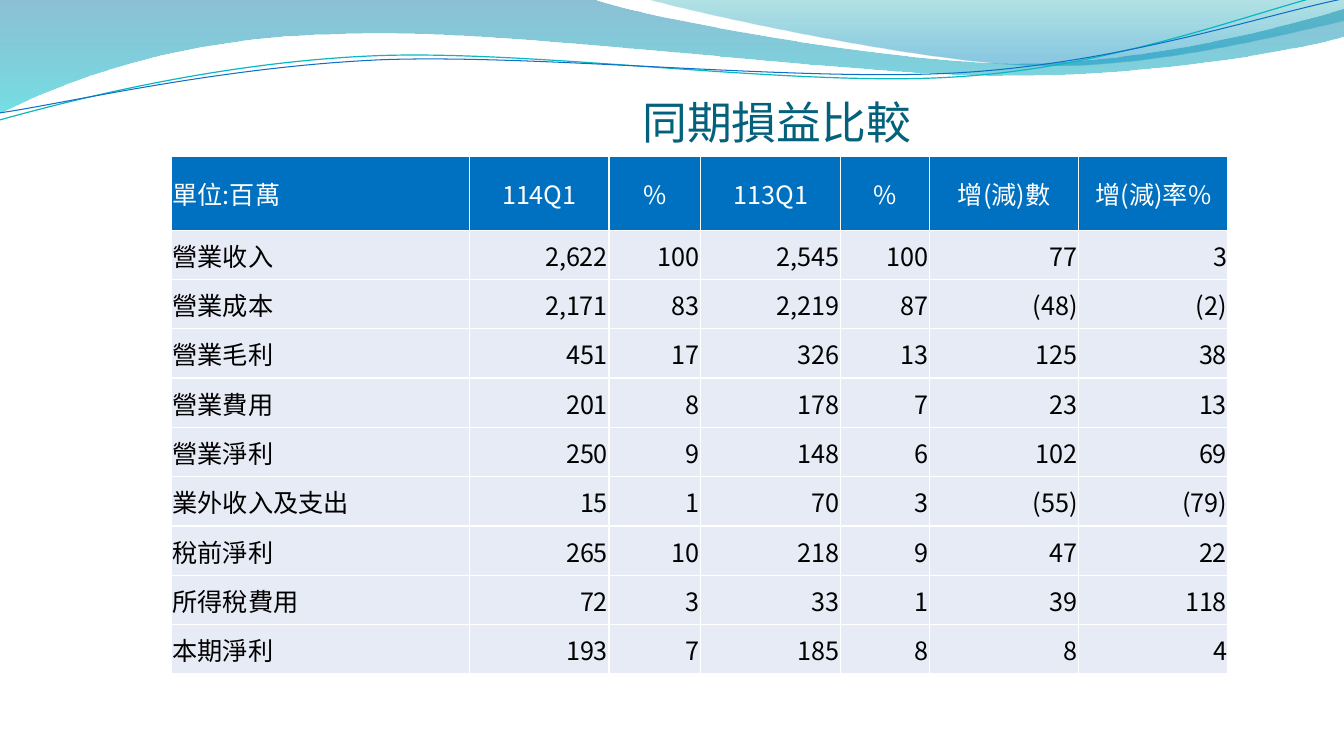
from math import cos, radians, sin

from lxml.etree import SubElement
from pptx import Presentation
from pptx.dml.color import RGBColor
from pptx.enum.text import MSO_ANCHOR as Anchor, PP_ALIGN as Align
from pptx.oxml.ns import qn
from pptx.util import Inches, Pt

FONT = "Noto Sans CJK SC"
WHITE = RGBColor(0xFF, 0xFF, 0xFF)
BLACK = RGBColor(0x00, 0x00, 0x00)
TITLE_TEAL = RGBColor(0x04, 0x61, 0x7B)
HEADER_BLUE = RGBColor(0x00, 0x70, 0xC0)
BODY_GREY = RGBColor(0xE7, 0xEB, 0xF5)
DEEP_BLUE = RGBColor(0x00, 0x74, 0xA1)
CYAN = RGBColor(0x00, 0xC6, 0xCF)
TEAL = RGBColor(0x00, 0xA1, 0xA9)
SKY_BLUE = RGBColor(0x00, 0x8B, 0xBF)
LINE_TEAL = RGBColor(0x0A, 0xB8, 0xBF)
LINE_BLUE = RGBColor(0x0F, 0x6F, 0xC6)

# Each outline is a start point followed by segments of one point (straight)
# or three points (Bezier curve). Gradient stops: position, colour, opacity %.
BANDS = [
    ((-0.01, -0.01, 13.36, 1.14),
     (0, 0),
     [[(5.87, -0.01)],
      [(6.34, 0.17), (8.85, 0.63), (10.11, 0.63)],
      [(11.38, 0.63), (12.78, 0.26), (13.33, 0.09)],
      [(13.35, 0.36)],
      [(13.11, 0.44), (11.6, 0.76), (9.94, 0.75)],
      [(8.29, 0.75), (5.09, 0.28), (3.43, 0.34)],
      [(1.72, 0.36), (0.61, 0.83), (-0.01, 1.13)],
      [(0, 0)]],
     [(0, DEEP_BLUE, 45), (1, CYAN, 55)]),
    ((6.39, -0.01, 6.94, 0.7),
     (6.39, -0.01),
     [[(6.79, 0.11), (9.09, 0.62), (10.25, 0.65)],
      [(11.41, 0.69), (12.82, 0.32), (13.33, 0.21)],
      [(13.33, 0)],
      [(6.39, -0.01)]],
     [(0, TEAL, 30), (0.8, SKY_BLUE, 45)]),
]
STROKE_TILT = -2.7
STROKES = [
    ((-0.03, 0.22, 13.36, 0.71),
     (-0.01, 1.19),
     [[(0.64, 1.01), (2.11, 0.62), (3.69, 0.55)],
      [(5.27, 0.48), (7.9, 0.87), (9.5, 0.76)],
      [(11.1, 0.66), (12.52, 0.08), (13.31, -0.1)]],
     LINE_TEAL, 0.85),
    ((-0.02, 0.3, 13.38, 0.58),
     (0, 1.12),
     [[(0.63, 1.03), (2.18, 0.66), (3.78, 0.59)],
      [(5.37, 0.53), (7.96, 0.82), (9.55, 0.72)],
      [(11.15, 0.62), (12.55, 0.14), (13.34, -0.02)]],
     LINE_BLUE, 0.75),
]

COLUMN_WIDTHS = [2.96, 1.38, 0.91, 1.39, 0.88, 1.48, 1.48]
ROWS = [
    ["單位:百萬", "114Q1", "%", "113Q1", "%", "增(減)數", "增(減)率%"],
    ["營業收入", "2,622", "100", "2,545", "100", "77", "3"],
    ["營業成本", "2,171", "83", "2,219", "87", "(48)", "(2)"],
    ["營業毛利", "451", "17", "326", "13", "125", "38"],
    ["營業費用", "201", "8", "178", "7", "23", "13"],
    ["營業淨利", "250", "9", "148", "6", "102", "69"],
    ["業外收入及支出", "15", "1", "70", "3", "(55)", "(79)"],
    ["稅前淨利", "265", "10", "218", "9", "47", "22"],
    ["所得稅費用", "72", "3", "33", "1", "39", "118"],
    ["本期淨利", "193", "7", "185", "8", "8", "4"],
]


def place(shape, box):
    shape.left, shape.top, shape.width, shape.height = map(Inches, box)


def add_outline(slide, box, start, segments, close, tilt=0):
    """Draw the outline in its box; points are given as seen after the tilt."""
    left, top, width, height = box
    center_x, center_y = left + width / 2, top + height / 2
    cosine, sine = cos(radians(-tilt)), sin(radians(-tilt))

    def untilted(point):
        x, y = point[0] - center_x, point[1] - center_y
        return (Inches(center_x + x * cosine - y * sine),
                Inches(center_y + x * sine + y * cosine))

    builder = slide.shapes.build_freeform(*untilted(start))
    builder.add_line_segments([untilted(point) for segment in segments for point in segment],
                              close=close)
    shape = builder.convert_to_shape()
    place(shape, box)
    shape.rotation = tilt
    shape.shadow.inherit = False

    straight_lines = iter(shape._element.findall(".//" + qn("a:lnTo")))
    for segment in segments:
        lines = [next(straight_lines) for _ in segment]
        if len(lines) == 3:
            curve = SubElement(lines[0].getparent(), qn("a:cubicBezTo"))
            lines[0].addprevious(curve)
            for line in lines:
                curve.append(line[0])
                line.getparent().remove(line)
    return shape


def add_waves(slide):
    for box, start, segments, stops in BANDS:
        band = add_outline(slide, box, start, segments, close=True)
        band.line.fill.background()
        band.fill.gradient()
        band.fill.gradient_angle = 270
        for stop, (position, color, _) in zip(band.fill.gradient_stops, stops):
            stop.position = position
            stop.color.rgb = color
        colors = band._element.spPr.findall(".//" + qn("a:srgbClr"))
        for element, (_, _, opacity) in zip(colors, stops):
            SubElement(element, qn("a:alpha"), val=str(opacity * 1000))
    for box, start, segments, color, width in STROKES:
        stroke = add_outline(slide, box, start, segments, close=False, tilt=STROKE_TILT)
        stroke.fill.background()
        stroke.line.color.rgb = color
        stroke.line.width = Pt(width)


def format_paragraph(paragraph, size, color, alignment):
    paragraph.alignment = alignment
    font = paragraph.font
    font.name, font.size, font.bold = FONT, Pt(size), False
    font.color.rgb = color
    SubElement(font._element, qn("a:ea"), typeface=FONT)


def place_title(slide, box):
    title = slide.shapes.title
    slide.shapes._spTree.append(title._element)
    place(title, box)
    frame = title.text_frame
    frame.text = "同期損益比較"
    frame.vertical_anchor = Anchor.BOTTOM
    frame.margin_left = frame.margin_right = frame.margin_bottom = 0
    frame.margin_top = Inches(0.05)
    format_paragraph(frame.paragraphs[0], 32, TITLE_TEAL, Align.CENTER)


def add_borders(cell):
    properties = cell._tc.get_or_add_tcPr()
    for side in ("lnL", "lnR", "lnT", "lnB"):
        line = SubElement(properties, qn(f"a:{side}"), w=str(Pt(1)))
        SubElement(SubElement(line, qn("a:solidFill")), qn("a:srgbClr"), val=str(WHITE))


def add_income_table(slide, box):
    frame = slide.shapes.add_table(len(ROWS), len(COLUMN_WIDTHS), *map(Inches, box))
    table = frame.table
    table.first_row = table.horz_banding = False
    for column, width in zip(table.columns, COLUMN_WIDTHS):
        column.width = Inches(width)
    for row_index, texts in enumerate(ROWS):
        header = row_index == 0
        for column_index, text in enumerate(texts):
            cell = table.cell(row_index, column_index)
            cell.text = text
            cell.vertical_anchor = Anchor.MIDDLE
            cell.margin_left = cell.margin_right = cell.margin_top = Inches(0.01)
            cell.margin_bottom = 0
            add_borders(cell)
            cell.fill.solid()
            cell.fill.fore_color.rgb = HEADER_BLUE if header else BODY_GREY
            if column_index == 0:
                alignment = Align.LEFT
            else:
                alignment = Align.CENTER if header else Align.RIGHT
            format_paragraph(cell.text_frame.paragraphs[0], 18, WHITE if header else BLACK, alignment)


def main():
    presentation = Presentation()
    presentation.slide_width, presentation.slide_height = Inches(13.33), Inches(7.5)
    slide = presentation.slides.add_slide(presentation.slide_layouts[5])
    add_waves(slide)
    place_title(slide, (2.83, 0.79, 9.75, 0.68))
    add_income_table(slide, (1.7, 1.55, 10.48, 4.89))
    presentation.save("out.pptx")


if __name__ == "__main__":
    main()
